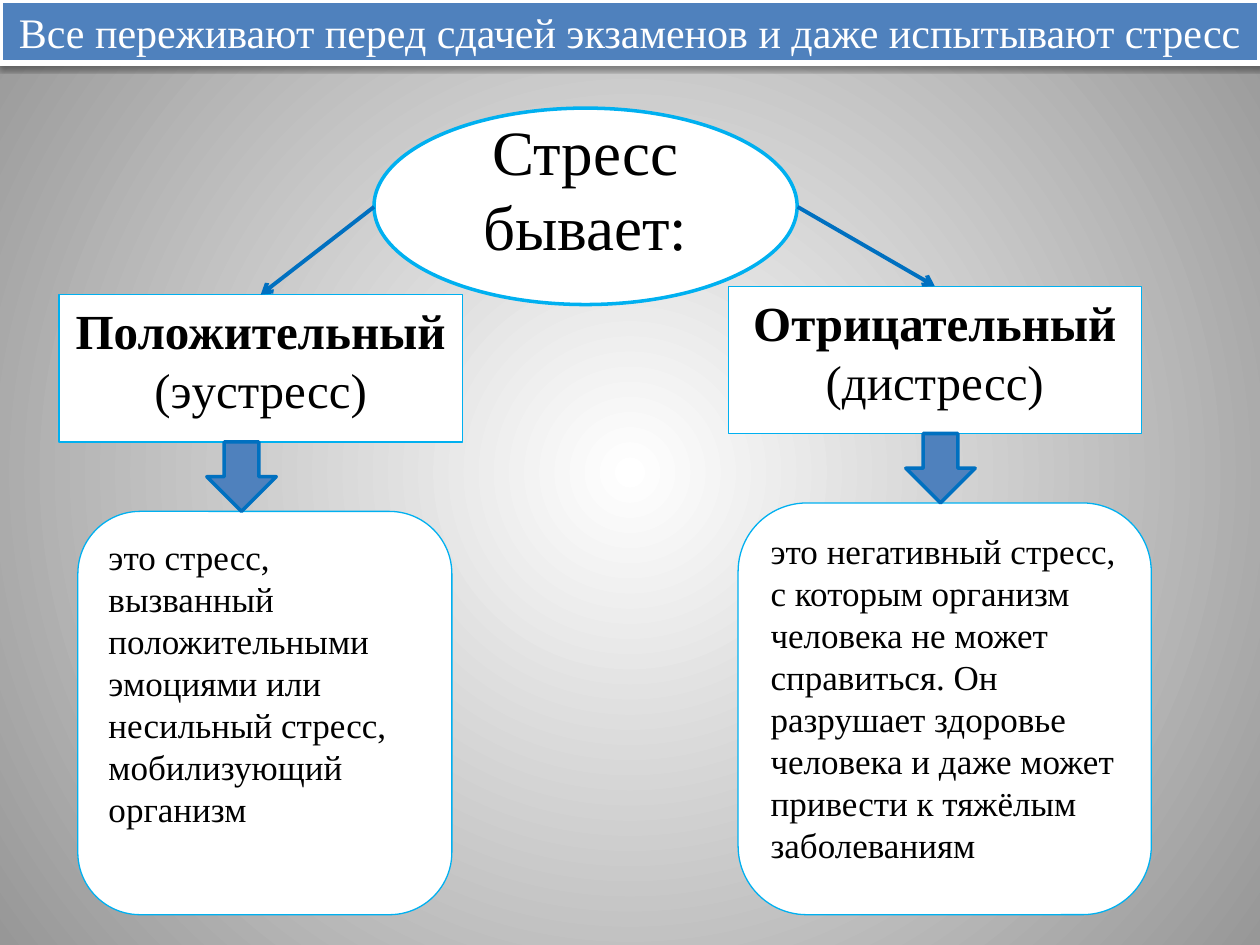
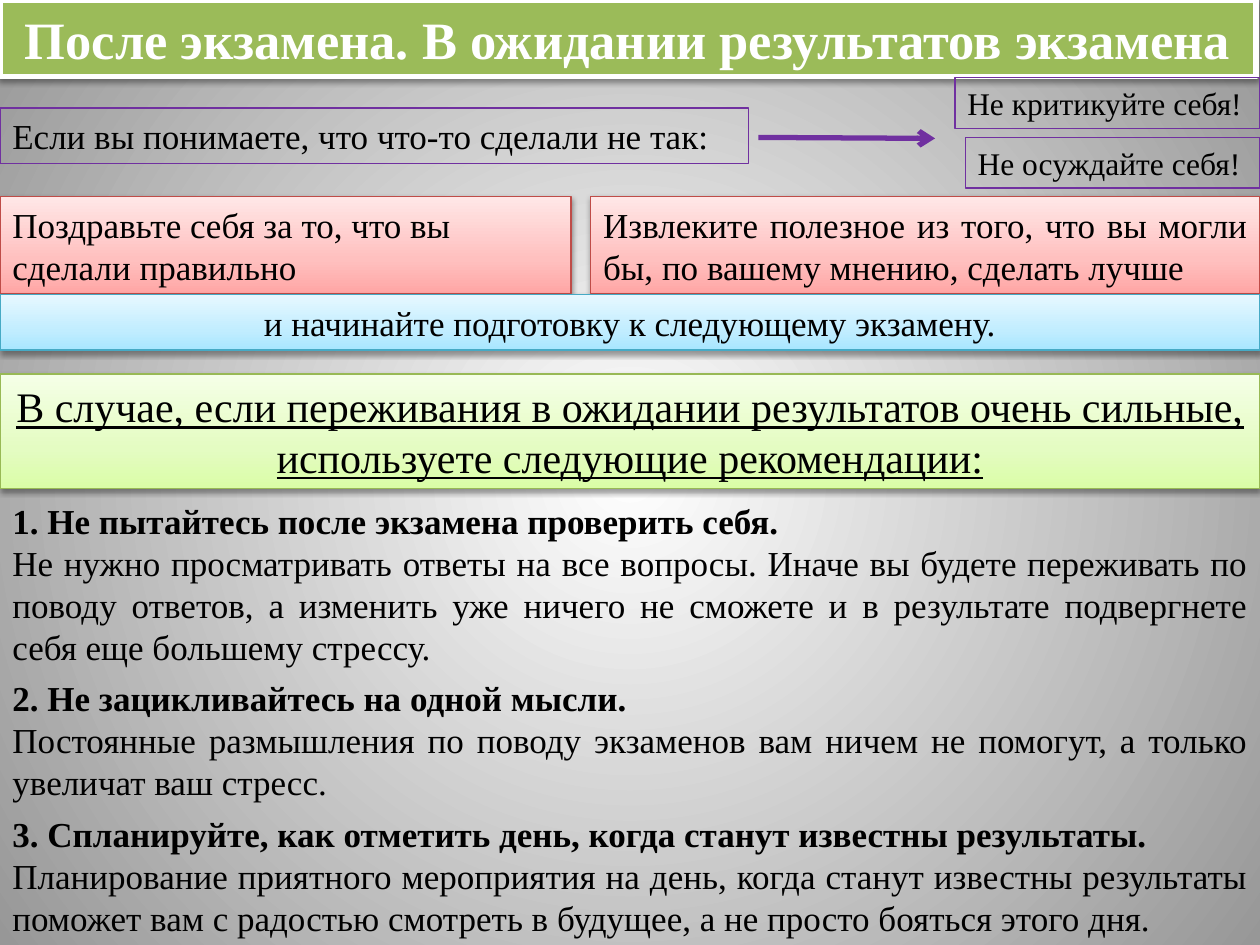
import pptx
import pptx.dml.color
import pptx.enum.shapes
import pptx.enum.text
import pptx.oxml
import pptx.oxml.ns
import pptx.util
from pptx.util import Cm

COLORS = {
    "black": "000000", "white": "FFFFFF", "gray": "979797",
    "blue": "4F81BD", "green": "9BBB59", "sky": "00B0F0",
    "arrow": "0070C0", "purple": "7030A0",
    "red_edge": "BF4C48", "lime_edge": "98B955", "aqua_edge": "46AAC5",
}
GRADIENTS = {
    "red": ("FFA6A5", "FFC0BF", "FFE7E7"),
    "lime": ("DAFDA7", "E4FCC2", "F5FFE7"),
    "aqua": ("A7E6FF", "C1EDFF", "E7F8FF"),
}
FONT = "Times New Roman"
WIDTH, HEIGHT = 25.4, 19.05
SHAPE = pptx.enum.shapes.MSO_SHAPE
ALIGN = pptx.enum.text.PP_ALIGN
ANCHOR = pptx.enum.text.MSO_ANCHOR
qn = pptx.oxml.ns.qn


def rgb(name):
    return pptx.dml.color.RGBColor.from_string(COLORS[name])


def xml(tag, content="", attributes=""):
    namespace = pptx.oxml.ns.nsdecls("a")
    return pptx.oxml.parse_xml(f"<a:{tag} {namespace} {attributes}>{content}</a:{tag}>")


def set_gradient(element, stops, direction):
    stop_list = "".join(
        f'<a:gs pos="{place * 1000}"><a:srgbClr val="{color}"/></a:gs>' for place, color in stops)
    empty_fill = next(element.iter(qn("a:noFill")))
    gradient = xml("gradFill", f"<a:gsLst>{stop_list}</a:gsLst>{direction}", 'rotWithShape="1"')
    empty_fill.getparent().replace(empty_fill, gradient)


class Painter:
    def __init__(self):
        self.deck = pptx.Presentation()
        self.deck.slide_width, self.deck.slide_height = Cm(WIDTH), Cm(HEIGHT)
        self.slide = None

    def new_slide(self):
        self.slide = self.deck.slides.add_slide(self.deck.slide_layouts[6])
        self.slide.background.fill.background()
        center = '<a:fillToRect l="50000" t="50000" r="50000" b="50000"/>'
        set_gradient(self.slide.element, [(0, COLORS["white"]), (100, COLORS["gray"])],
                     f'<a:path path="circle">{center}</a:path>')

    def put_text(self, box, text, size, align=ALIGN.LEFT, anchor=ANCHOR.TOP,
                 color="black", lead_bold=False, tail="", after=0):
        frame = box.text_frame
        frame.word_wrap = True
        frame.vertical_anchor = anchor
        frame.text = text
        if tail:
            frame.paragraphs[0].add_run().text = tail
        for para in frame.paragraphs:
            para.alignment = align
            para.space_after = pptx.util.Pt(after)
            for span in para.runs:
                span.font.name = FONT
                span.font.size = pptx.util.Pt(size)
                span.font.color.rgb = rgb(color)
        frame.paragraphs[0].runs[0].font.bold = lead_bold

    def panel(self, place, line, fill=None, kind=SHAPE.RECTANGLE, weight=0.75, shadow=False):
        box = self.slide.shapes.add_shape(kind, *map(Cm, place))
        box.shadow.inherit = False
        if fill in COLORS:
            box.fill.solid()
            box.fill.fore_color.rgb = rgb(fill)
        else:
            box.fill.background()
            if fill:
                set_gradient(box.element, zip((0, 35, 100), GRADIENTS[fill]),
                             '<a:lin ang="16200000" scaled="1"/>')
        box.line.color.rgb = rgb(line)
        box.line.width = pptx.util.Pt(weight)
        if shadow:
            tint = f'<a:srgbClr val="{COLORS["black"]}"><a:alpha val="38000"/></a:srgbClr>'
            box.element.spPr.find(qn("a:effectLst")).append(xml(
                "outerShdw", tint,
                'blurRad="40000" dist="20000" dir="5400000" rotWithShape="0"'))
        return box

    def title(self, text, fill, width, height, size, bold=False):
        box = self.panel((0, 0, width, height), "white", fill, weight=3, shadow=True)
        self.put_text(box, text, size, ALIGN.CENTER, ANCHOR.MIDDLE, "white", bold)

    def arrow(self, start, end, color, weight):
        line = self.slide.shapes.add_connector(
            pptx.enum.shapes.MSO_CONNECTOR.STRAIGHT, *map(Cm, start + end))
        line.line.color.rgb = rgb(color)
        line.line.width = pptx.util.Pt(weight)
        properties = line.element.spPr
        properties.find(qn("a:ln")).append(xml("tailEnd", attributes='type="arrow"'))
        properties.append(xml("effectLst"))

    def tip(self, top, height, text):
        box = self.slide.shapes.add_textbox(*map(Cm, (0, top, WIDTH, height)))
        self.put_text(box, text, 20, ALIGN.JUSTIFY, ANCHOR.MIDDLE, lead_bold=True)


def stress_slide(painter):
    painter.new_slide()
    painter.title("Все переживают перед сдачей экзаменов и даже испытывают стресс",
                  "blue", WIDTH, 1.27, 24)
    topic = painter.panel((7.54, 2.18, 8.53, 3.96), "sky", "white", SHAPE.OVAL, 2)
    painter.put_text(topic, "Стресс бывает:", 36, ALIGN.CENTER, ANCHOR.MIDDLE)
    topic.text_frame.margin_bottom = Cm(0.87)

    heading_height, arrow_size, bottom = 2.97, 1.4, 18.44
    branches = [
        (1.19, 5.94, 8.13, 7.54, 4.17, (1.57, 7.54), "Положительный ", "(эустресс)",
         "это стресс, вызванный положительными эмоциями или несильный стресс, "
         "мобилизующий организм"),
        (14.68, 5.77, 8.33, 16.08, 18.26, (14.88, 8.33), "Отрицательный ", "(дистресс)",
         "это негативный стресс, с которым организм человека не может справиться. "
         "Он разрушает здоровье человека и даже может привести к тяжёлым заболеваниям"),
    ]
    for left, top, width, start, arrow_left, (body_left, body_width), name, term, text in branches:
        heading = painter.panel((left, top, width, heading_height), "sky", "white")
        painter.put_text(heading, name, 28, ALIGN.CENTER, lead_bold=True, tail=term, after=10)
        arrow_top = top + heading_height
        body_top = arrow_top + arrow_size
        body = painter.panel((body_left, body_top, body_width, bottom - body_top),
                             "sky", "white", SHAPE.ROUNDED_RECTANGLE)
        painter.put_text(body, text, 20, after=10)
        painter.arrow((start, 4.17), (left + width / 2, top), "arrow", 2.25)
        painter.panel((arrow_left, arrow_top, arrow_size, arrow_size),
                      "arrow", "blue", SHAPE.DOWN_ARROW, 2)


def results_slide(painter):
    painter.new_slide()
    painter.title("После экзамена. В ожидании результатов экзамена",
                  "green", 25.32, 1.55, 30, True)

    outlined = [
        ((19.46, 2.77, 5.94, 1.02), 18, "Не осуждайте себя!"),
        ((19.25, 1.57, 6.15, 1.02), 18, "Не критикуйте себя!"),
        ((0, 2.18, 15.09, 1.12), 20, "Если вы понимаете, что что-то сделали не так:"),
    ]
    for place, size, text in outlined:
        painter.put_text(painter.panel(place, "purple"), text, size)

    shaded = [
        ((11.91, 3.96, 13.49, 1.96), "red", 20, ALIGN.JUSTIFY,
         "Извлеките полезное из того, что вы могли бы, по вашему мнению, сделать лучше"),
        ((0, 7.54, WIDTH, 2.31), "lime", 24, ALIGN.CENTER,
         "В случае, если переживания в ожидании результатов очень сильные, "
         "используете следующие рекомендации:"),
        ((0, 3.96, 11.51, 1.96), "red", 20, ALIGN.LEFT,
         "Поздравьте себя за то, что вы сделали правильно"),
        ((0, 5.94, WIDTH, 1.12), "aqua", 20, ALIGN.CENTER,
         "и начинайте подготовку к следующему экзамену."),
    ]
    for place, tone, size, align, text in shaded:
        box = painter.panel(place, f"{tone}_edge", tone, shadow=True)
        painter.put_text(box, text, size, align, ANCHOR.MIDDLE)
        box.text_frame.paragraphs[0].runs[0].font.underline = tone == "lime"

    painter.arrow((15.29, 2.77), (18.85, 2.79), "purple", 3)

    painter.tip(9.93, 3.68,
                "1. Не пытайтесь после экзамена проверить себя.\n"
                "Не нужно просматривать ответы на все вопросы. Иначе вы будете переживать "
                "по поводу ответов, а изменить уже ничего не сможете и в результате "
                "подвергнете себя еще большему стрессу.")
    painter.tip(13.49, 2.82,
                "2. Не зацикливайтесь на одной мысли.\n"
                "Постоянные размышления по поводу экзаменов вам ничем не помогут, "
                "а только увеличат ваш стресс.")
    painter.tip(16.23, 2.82,
                "3. Спланируйте, как отметить день, когда станут известны результаты.\n"
                "Планирование приятного мероприятия на день, когда станут известны результаты "
                "поможет вам с радостью смотреть в будущее, а не просто бояться этого дня.")


def main():
    painter = Painter()
    stress_slide(painter)
    results_slide(painter)
    painter.deck.save("out.pptx")


if __name__ == "__main__":
    main()
